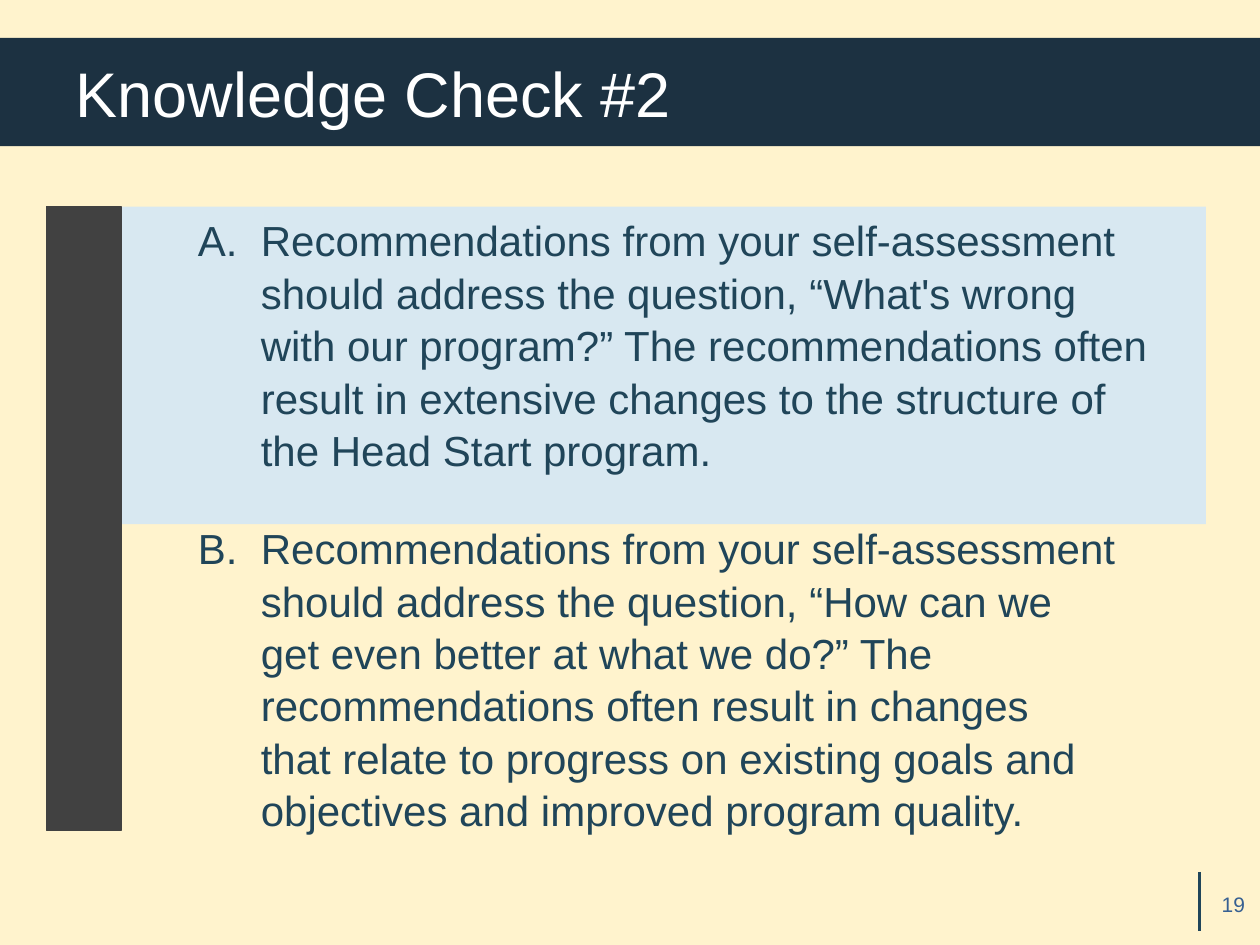
import pptx
import pptx.util
import pptx.dml.color
import pptx.enum.shapes
import pptx.enum.text
import pptx.oxml.ns
from lxml import etree

Inches = pptx.util.Inches
RGBColor = pptx.dml.color.RGBColor
Anchor = pptx.enum.text.MSO_ANCHOR
Align = pptx.enum.text.PP_ALIGN

CREAM = RGBColor(0xFF, 0xF3, 0xCD)
NAVY = RGBColor(0x1C, 0x31, 0x41)
GRAY = RGBColor(0x41, 0x41, 0x41)
PALE = RGBColor(0xD8, 0xE8, 0xF1)
TEAL = RGBColor(0x20, 0x45, 0x59)
RULE = RGBColor(0x20, 0x45, 0x5A)
BLUE = RGBColor(0x37, 0x60, 0x92)
WHITE = RGBColor(0xFF, 0xFF, 0xFF)

FIRST = [
    "Recommendations from your self-assessment should address the question, “What's wrong ",
    "with our program?” The recommendations often result in extensive changes to the structure of ",
    "the Head Start program.",
]
SECOND = [
    "Recommendations from your self-assessment should address the question, “How can we ",
    "get even better at what we do?” The recommendations often result in changes ",
    "that relate to progress on existing goals and objectives and improved program quality.",
]


def place(shape, left, top, width, height):
    shape.left, shape.top = Inches(left), Inches(top)
    shape.width, shape.height = Inches(width), Inches(height)


def paint(shape, color):
    shape.fill.solid()
    shape.fill.fore_color.rgb = color


def style(para, size, color, align=Align.LEFT):
    para.alignment = align
    para.font.name = "Arial"
    para.font.size = pptx.util.Pt(size)
    para.font.color.rgb = color


def frame(shape, anchor):
    text = shape.text_frame
    text.word_wrap = True
    text.auto_size = pptx.enum.text.MSO_AUTO_SIZE.NONE
    text.vertical_anchor = anchor
    return text.paragraphs[0]


def indent(para, margin, first):
    props = para._p.get_or_add_pPr()
    props.set("marL", str(Inches(margin)))
    props.set("indent", str(Inches(first)))
    return props


def add_bar(slide):
    bar = slide.shapes.add_shape(
        pptx.enum.shapes.MSO_SHAPE.RECTANGLE,
        Inches(0.37), Inches(1.64), Inches(0.59), Inches(4.95))
    bar.shadow.inherit = False
    paint(bar, GRAY)
    bar.line.color.rgb = GRAY
    bar.line.width = pptx.util.Pt(0.75)


def add_rule(slide):
    rule = slide.shapes.add_connector(
        pptx.enum.shapes.MSO_CONNECTOR.STRAIGHT,
        Inches(9.52), Inches(6.92), Inches(9.52), Inches(7.39))
    rule.line.color.rgb = RULE
    rule.line.width = pptx.util.Pt(2)
    etree.SubElement(rule._element.spPr, pptx.oxml.ns.qn("a:effectLst"))


def set_title(title):
    place(title, 0, 0.3, 10, 0.86)
    paint(title, NAVY)
    para = frame(title, Anchor.MIDDLE)
    para.text = "Knowledge Check #2"
    indent(para, 0, 0.5)
    style(para, 36, WHITE)


def set_choice(body, lines, start, top, height, anchor):
    place(body, 0.97, top, 8.6, height)
    para = frame(body, anchor)
    for i, line in enumerate(lines):
        if i:
            para.add_line_break()
        para.add_run().text = line
    para.line_spacing = 1.04
    para.space_before = pptx.util.Pt(0)
    props = indent(para, 1, -0.5)
    qn = pptx.oxml.ns.qn
    tint = etree.SubElement(props, qn("a:buClr"))
    etree.SubElement(tint, qn("a:srgbClr"), val=str(TEAL))
    etree.SubElement(props, qn("a:buFont"), typeface="Arial")
    etree.SubElement(props, qn("a:buAutoNum"), type="alphaUcPeriod", startAt=str(start))
    style(para, 24, TEAL)


def add_page(slide):
    box = slide.shapes.add_textbox(Inches(9.18), Inches(7.03), Inches(0.8), Inches(0.4))
    para = frame(box, Anchor.TOP)
    para.text = "19"
    style(para, 12, BLUE, Align.RIGHT)


def main():
    deck = pptx.Presentation()
    deck.slide_width, deck.slide_height = Inches(10), Inches(7.5)
    slide = deck.slides.add_slide(deck.slide_layouts[3])
    paint(slide.background, CREAM)
    add_bar(slide)
    add_rule(slide)
    title, upper, lower = slide.placeholders
    set_title(title)
    paint(upper, PALE)
    set_choice(upper, FIRST, 1, 1.64, 2.52, Anchor.TOP)
    set_choice(lower, SECOND, 2, 4.17, 2.42, Anchor.MIDDLE)
    add_page(slide)
    deck.save("out.pptx")


if __name__ == "__main__":
    main()
